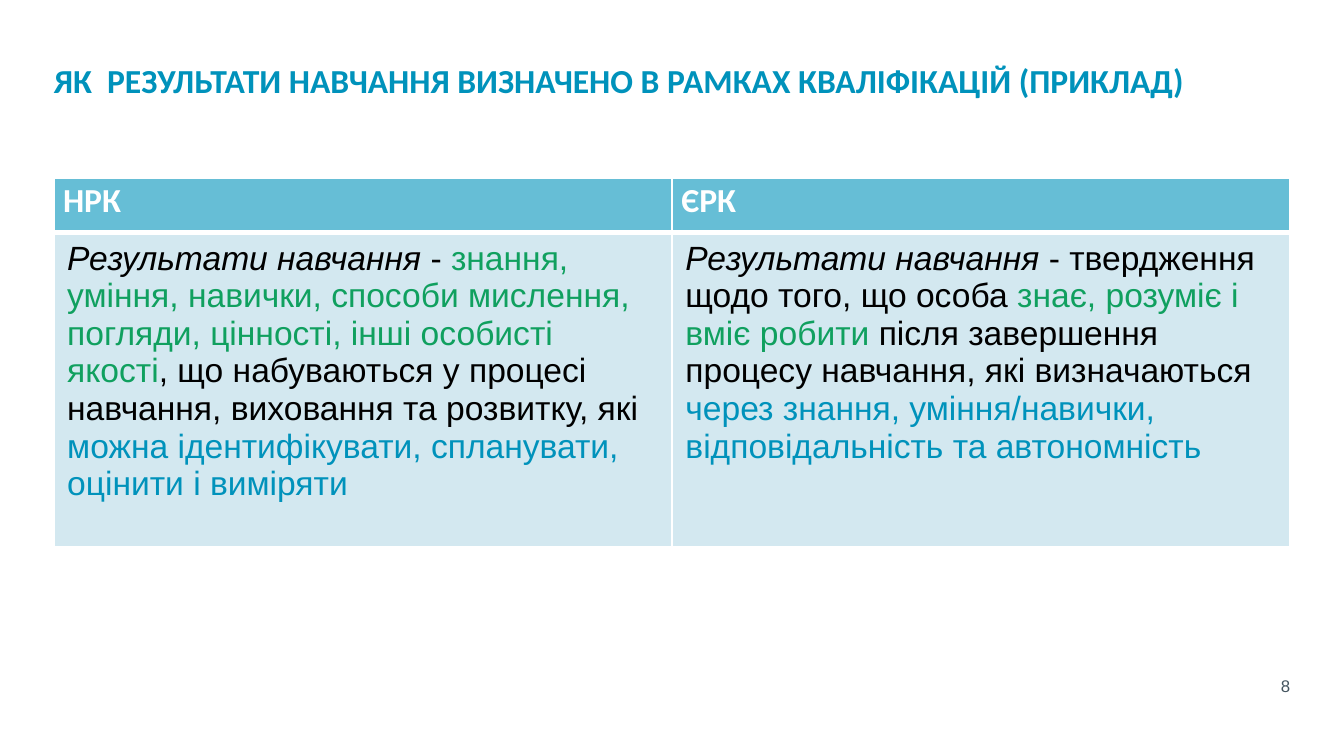
"""Build the slide that compares learning outcomes in two frameworks."""
import pptx
import pptx.util
import pptx.dml.color
import pptx.enum.text
import pptx.oxml
import pptx.oxml.ns

Pt = pptx.util.Pt
ALIGN = pptx.enum.text.PP_ALIGN
ANCHOR = pptx.enum.text.MSO_ANCHOR
HEX = {"blue": "0092BB", "head": "66BED6", "cell": "D3E8F0", "green": "10A05F",
       "black": "000000", "white": "FFFFFF", "gray": "455560"}
TITLE = "ЯК  РЕЗУЛЬТАТИ НАВЧАННЯ ВИЗНАЧЕНО В РАМКАХ КВАЛІФІКАЦІЙ (ПРИКЛАД)"
HEADS = ["НРК", "ЄРК"]
TERM = ("Результати навчання", "black", True)
BODY = [
    [TERM, (" - ", "black"),
     ("знання, уміння, навички, способи мислення, погляди, цінності, "
      "інші особисті якості", "green"),
     (", що набуваються у процесі навчання, виховання та розвитку, які ", "black"),
     ("можна ідентифікувати, спланувати, оцінити і виміряти", "blue")],
    [TERM, (" - твердження щодо того, що особа ", "black"),
     ("знає, розуміє і вміє робити ", "green"),
     ("після завершення процесу навчання, які визначаються ", "black"),
     ("через знання, уміння/навички, відповідальність та автономність", "blue")],
]
BOLD = {"name": "Calibri", "size": Pt(18), "bold": True}
PLAIN = {"name": "Arial", "size": Pt(18), "bold": False}
SMALL = {"name": "Arial", "size": Pt(9)}
FLUSH = {"margin_left": 0, "margin_right": 0, "margin_top": 0, "margin_bottom": 0}


def apply(item, form):
    """Set each attribute named in a dict of format values."""
    for key, value in form.items():
        setattr(item, key, value)


def tint(name):
    """Return the colour with the given name."""
    return pptx.dml.color.RGBColor.from_string(HEX[name])


def write(para, runs, font, form):
    """Fill a paragraph with coloured runs."""
    apply(para, form)
    for text, color, *slant in runs:
        run = para.add_run()
        run.text = text
        apply(run.font, {**font, "italic": bool(slant)})
        run.font.color.rgb = tint(color)


def place(shape, box, runs, font, frame, form):
    """Move a text shape to its box and write one paragraph in it."""
    apply(shape, dict(zip(("left", "top", "width", "height"), map(Pt, box))))
    apply(shape.text_frame, {**FLUSH, "word_wrap": True, **frame})
    write(shape.text_frame.paragraphs[0], runs, font, form)


def border(cell, sides):
    """Draw white cell borders from a dict of side and width."""
    props = cell._tc.get_or_add_tcPr()
    space = pptx.oxml.ns.nsdecls("a")
    for spot, (side, width) in enumerate(sides.items()):
        props.insert(spot, pptx.oxml.parse_xml(
            f'<a:{side} {space} w="{Pt(width)}"><a:solidFill>'
            f'<a:srgbClr val="{HEX["white"]}"/></a:solidFill></a:{side}>'))


def cell_text(cell, runs, font, fill, form, sides):
    """Fill, frame and write one table cell."""
    cell.fill.solid()
    cell.fill.fore_color.rgb = tint(fill)
    border(cell, sides)
    write(cell.text_frame.paragraphs[0], runs, font, form)


def add_grid(slide):
    """Add the table with its header row and its text row."""
    rows = [29.5, 168]
    grid = slide.shapes.add_table(
        2, 2, Pt(28.8), Pt(95.3), Pt(662.4), Pt(sum(rows))).table
    for row, high in zip(grid.rows, rows):
        row.height = Pt(high)
    for col, (head, runs) in enumerate(zip(HEADS, BODY)):
        top, low = grid.cell(0, col), grid.cell(1, col)
        apply(top, {**FLUSH, "margin_left": Pt(5), "margin_right": Pt(5)})
        cell_text(top, [(head, "white")], BOLD, "head",
                  {"line_spacing": 1.07, "space_after": Pt(8)},
                  {"lnL": 1, "lnR": 1, "lnT": 1, "lnB": 3})
        cell_text(low, runs, PLAIN, "cell", {},
                  {"lnL": 1, "lnR": 1, "lnT": 3, "lnB": 1})


def main():
    """Build and save the slide."""
    deck = pptx.Presentation()
    apply(deck, {"slide_width": Pt(720), "slide_height": Pt(405)})
    slide = deck.slides.add_slide(deck.slide_layouts[5])
    place(slide.shapes.title, (28.8, 34.6, 662.4, 43.2), [(TITLE, "blue")], BOLD,
          {"vertical_anchor": ANCHOR.TOP},
          {"alignment": ALIGN.LEFT, "line_spacing": 0.9})
    add_grid(slide)
    place(slide.shapes.add_textbox(0, 0, 0, 0), (677.5, 362.2, 13.7, 10.1),
          [("8", "gray")], SMALL, {"vertical_anchor": ANCHOR.MIDDLE},
          {"alignment": ALIGN.RIGHT})
    deck.save("out.pptx")


if __name__ == "__main__":
    main()
